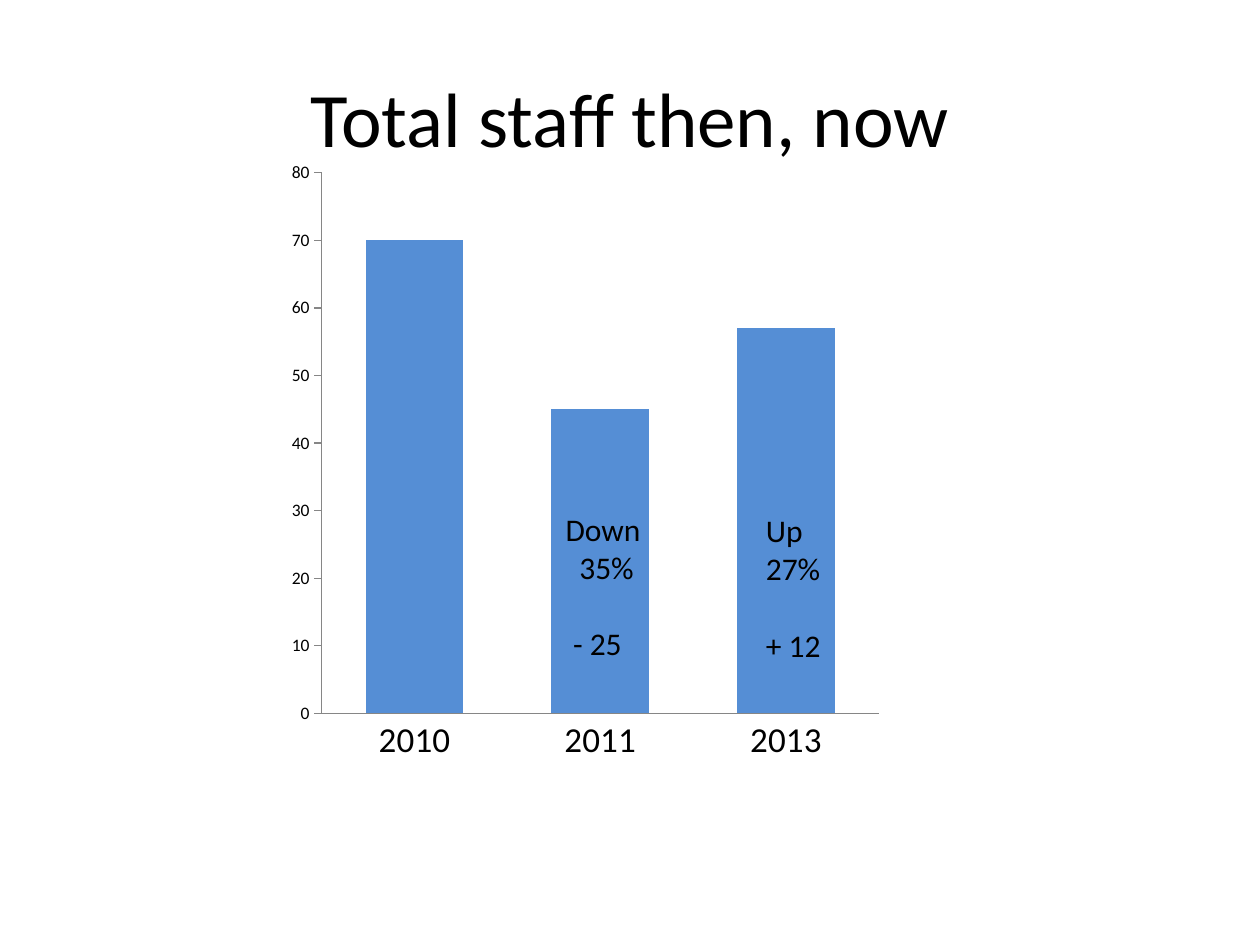
from lxml import etree
from pptx import Presentation
from pptx import util as u
from pptx.chart import data
from pptx.dml.color import RGBColor
from pptx.enum import chart as ch, text
from pptx.oxml import ns

BLACK = RGBColor(0, 0, 0)
BLUE = RGBColor(0x55, 0x8E, 0xD5)
GRAY = RGBColor(0x86, 0x86, 0x86)
FONT = "Calibri"


def style(font, size):
    font.name = FONT
    font.size = u.Pt(size)
    font.color.rgb = BLACK


def add_title(slide, box, words):
    frame = slide.shapes.add_textbox(*map(u.Inches, box)).text_frame
    frame.word_wrap = True
    frame.vertical_anchor = text.MSO_ANCHOR.MIDDLE
    frame.text = words
    para = frame.paragraphs[0]
    para.alignment = text.PP_ALIGN.CENTER
    style(para.runs[0].font, 44)


def set_plot(chart, box):
    area = chart.plots[0]._element.getparent()
    for old in area.findall(ns.qn("c:layout")):
        area.remove(old)
    layout = etree.Element(ns.qn("c:layout"))
    manual = etree.SubElement(layout, ns.qn("c:manualLayout"))
    pairs = [("layoutTarget", "inner"), ("xMode", "edge"), ("yMode", "edge")]
    for tag, val in pairs + list(zip("xywh", box)):
        etree.SubElement(manual, ns.qn("c:" + tag)).set("val", str(val))
    area.insert(0, layout)


def add_bars(slide, box, years, staff):
    table = data.CategoryChartData()
    table.categories = years
    table.add_series("Series 1", staff)
    chart = slide.shapes.add_chart(
        ch.XL_CHART_TYPE.COLUMN_CLUSTERED, *map(u.Inches, box), table
    ).chart
    chart.has_legend = False
    chart.has_title = False
    style(chart.font, 10)
    plot = chart.plots[0]
    plot.gap_width = 90
    plot.vary_by_categories = False
    fill = plot.series[0].format.fill
    fill.solid()
    fill.fore_color.rgb = BLUE
    ticks = ch.XL_TICK_MARK
    for axis, size, mark in (
        (chart.category_axis, 20, ticks.NONE),
        (chart.value_axis, 10, ticks.OUTSIDE),
    ):
        axis.has_major_gridlines = False
        axis.major_tick_mark = mark
        axis.minor_tick_mark = ticks.NONE
        axis.format.line.color.rgb = GRAY
        style(axis.tick_labels.font, size)
    chart.value_axis.minimum_scale = 0
    chart.value_axis.maximum_scale = 80
    chart.value_axis.major_unit = 10
    set_plot(chart, (0.19, 0.28, 0.64, 0.6))


def add_note(slide, box, lines, indents):
    frame = slide.shapes.add_textbox(*map(u.Inches, box)).text_frame
    frame.word_wrap = False
    frame.auto_size = text.MSO_AUTO_SIZE.SHAPE_TO_FIT_TEXT
    frame.text = "\n".join(lines)
    for para, indent in zip(frame.paragraphs, indents):
        style(para.runs[0].font, 18)
        para._p.get_or_add_pPr().set("marL", str(u.Inches(indent)))
    frame.paragraphs[-1].space_before = u.Pt(22)


def main():
    deck = Presentation()
    deck.slide_width, deck.slide_height = u.Inches(10), u.Inches(7.5)
    slide = deck.slides.add_slide(deck.slide_layouts[6])
    add_title(slide, (0.5, 0.3, 9, 1.25), "Total staff then, now")
    add_bars(slide, (1.24, -0.63, 6.91, 7.15), ("2010", "2011", "2013"), (70, 45, 57))
    add_note(slide, (4.39, 4, 0.8, 1.31), ("Down", "35%", "- 25"), (0, 0.11, 0.06))
    add_note(slide, (5.98, 4.01, 0.64, 1.31), ("Up", "27%", "+ 12"), (0, 0, 0))
    deck.save("out.pptx")


if __name__ == "__main__":
    main()
